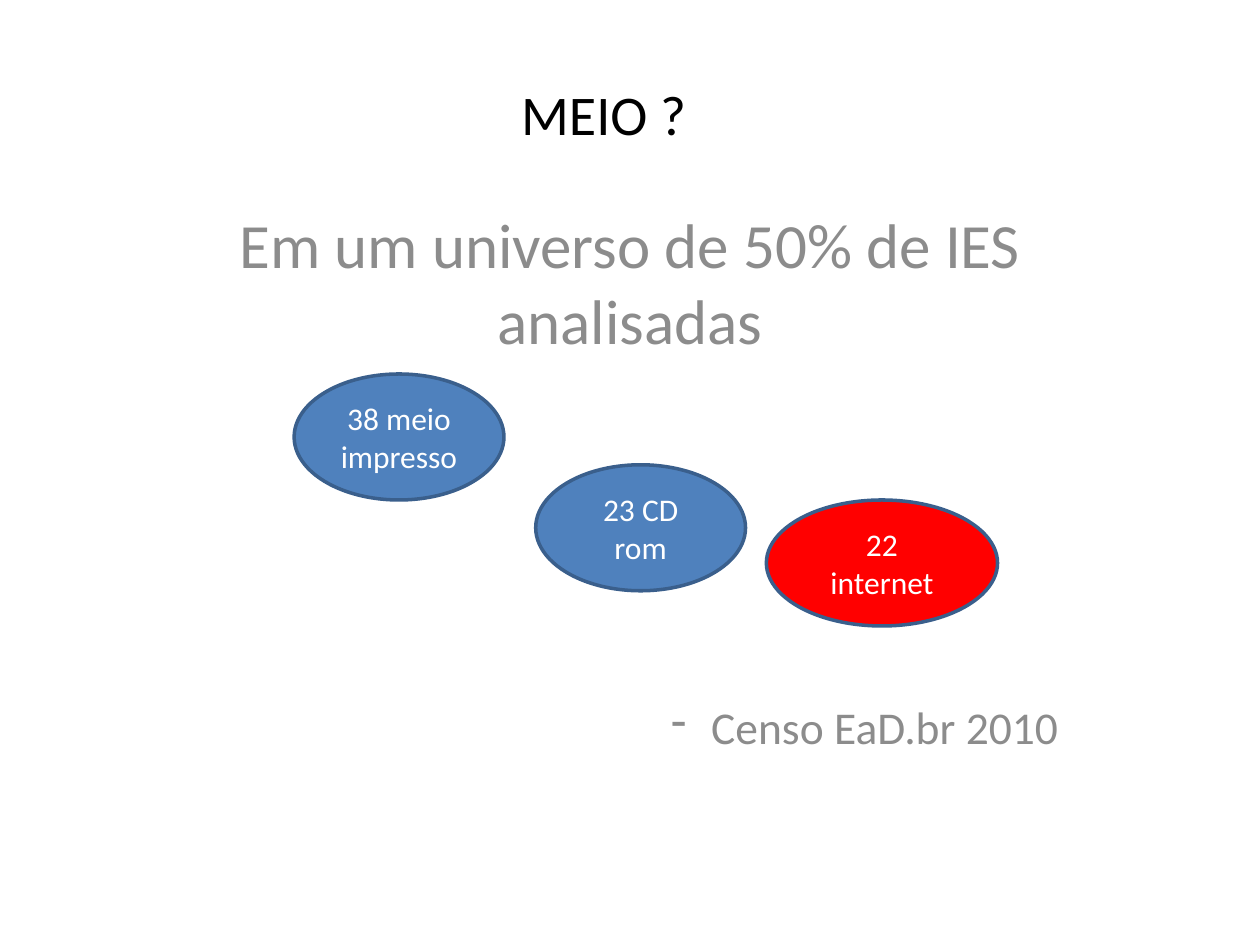
"""Build the slide on media used in distance learning."""
from typing import Any, NamedTuple

import pptx
import pptx.dml.color
import pptx.enum.shapes
import pptx.enum.text
import pptx.oxml
import pptx.oxml.ns
import pptx.util

Cm = pptx.util.Cm
Pt = pptx.util.Pt
ALIGN = pptx.enum.text.PP_ALIGN
ANCHOR = pptx.enum.text.MSO_ANCHOR
HUES = {"black": "000000", "gray": "8C8C8C", "white": "FFFFFF",
        "blue": "4F81BD", "red": "FF0000", "edge": "3A5F8C"}


class Line(NamedTuple):
    text: str
    size: int
    hue: str
    align: Any = ALIGN.CENTER
    gap: float = 0
    mark: str = ""


class Box(NamedTuple):
    left: float
    top: float
    width: float
    height: float
    lines: list[Line]


class Oval(NamedTuple):
    left: float
    top: float
    width: float
    text: str
    hue: str


TEXTS = [
    Box(3.81, 4.02, 17.78, 11.64, [
        Line("Em um universo de 50% de IES analisadas", 36, "gray", gap=7.2),
        Line(" Censo EaD.br 2010", 26, "gray", ALIGN.RIGHT, 195.5, "-"),
    ]),
    Box(6.35, 1.48, 11.64, 1.62, [Line("MEIO ?", 32, "black")]),
]
OVALS = [
    Oval(15.45, 10.08, 4.66, "22 internet", "red"),
    Oval(5.93, 7.54, 4.23, "38 meio impresso", "blue"),
    Oval(10.8, 9.37, 4.23, "23 CD rom", "blue"),
]


def color(hue: str) -> pptx.dml.color.RGBColor:
    return pptx.dml.color.RGBColor.from_string(HUES[hue])


def apply(target: Any, form: dict[str, Any]) -> None:
    for name, value in form.items():
        setattr(target, name, value)


def write(frame: Any, lines: list[Line], anchor: Any) -> None:
    apply(frame, {"word_wrap": True, "vertical_anchor": anchor})
    for rank, line in enumerate(lines):
        para = frame.add_paragraph() if rank else frame.paragraphs[0]
        apply(para, {"alignment": line.align, "space_before": Pt(line.gap)})
        if line.mark:
            mark = pptx.oxml.parse_xml(
                f'<a:buChar {pptx.oxml.ns.nsdecls("a")} char="{line.mark}"/>')
            para._p.get_or_add_pPr().append(mark)
        run = para.add_run()
        run.text = line.text
        apply(run.font, {"name": "Calibri", "size": Pt(line.size)})
        run.font.color.rgb = color(line.hue)


def add_text(slide: Any, box: Box) -> None:
    shape = slide.shapes.add_textbox(*map(Cm, box[:4]))
    write(shape.text_frame, box.lines, ANCHOR.TOP)


def add_oval(slide: Any, oval: Oval) -> None:
    shape = slide.shapes.add_shape(
        pptx.enum.shapes.MSO_SHAPE.OVAL,
        *map(Cm, (oval.left, oval.top, oval.width, 2.54)))
    shape.shadow.inherit = False
    shape.fill.solid()
    shape.fill.fore_color.rgb = color(oval.hue)
    shape.line.color.rgb = color("edge")
    shape.line.width = Pt(2)
    write(shape.text_frame, [Line(oval.text, 18, "white")], ANCHOR.MIDDLE)


def main() -> None:
    deck = pptx.Presentation()
    apply(deck, {"slide_width": Cm(25.4), "slide_height": Cm(19.05)})
    slide = deck.slides.add_slide(deck.slide_layouts[6])
    for box in TEXTS:
        add_text(slide, box)
    for oval in OVALS:
        add_oval(slide, oval)
    deck.save("out.pptx")


if __name__ == "__main__":
    main()
